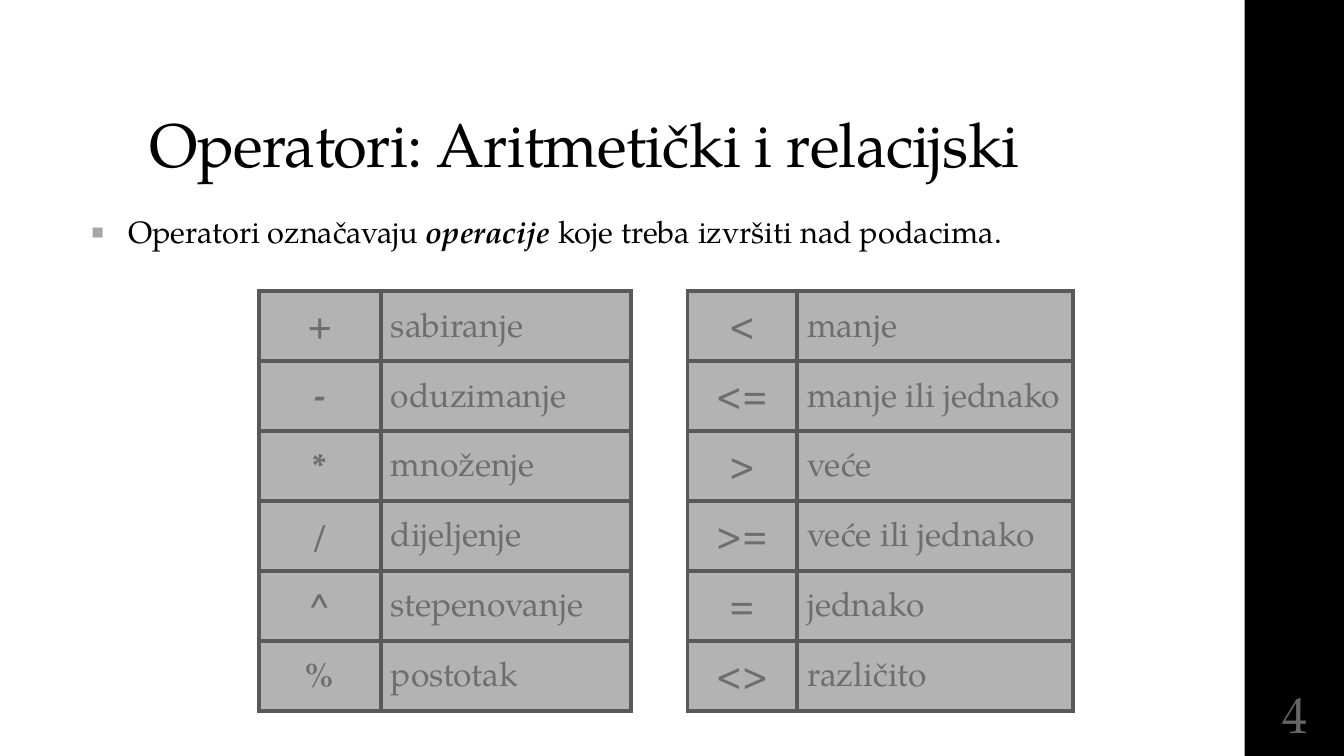
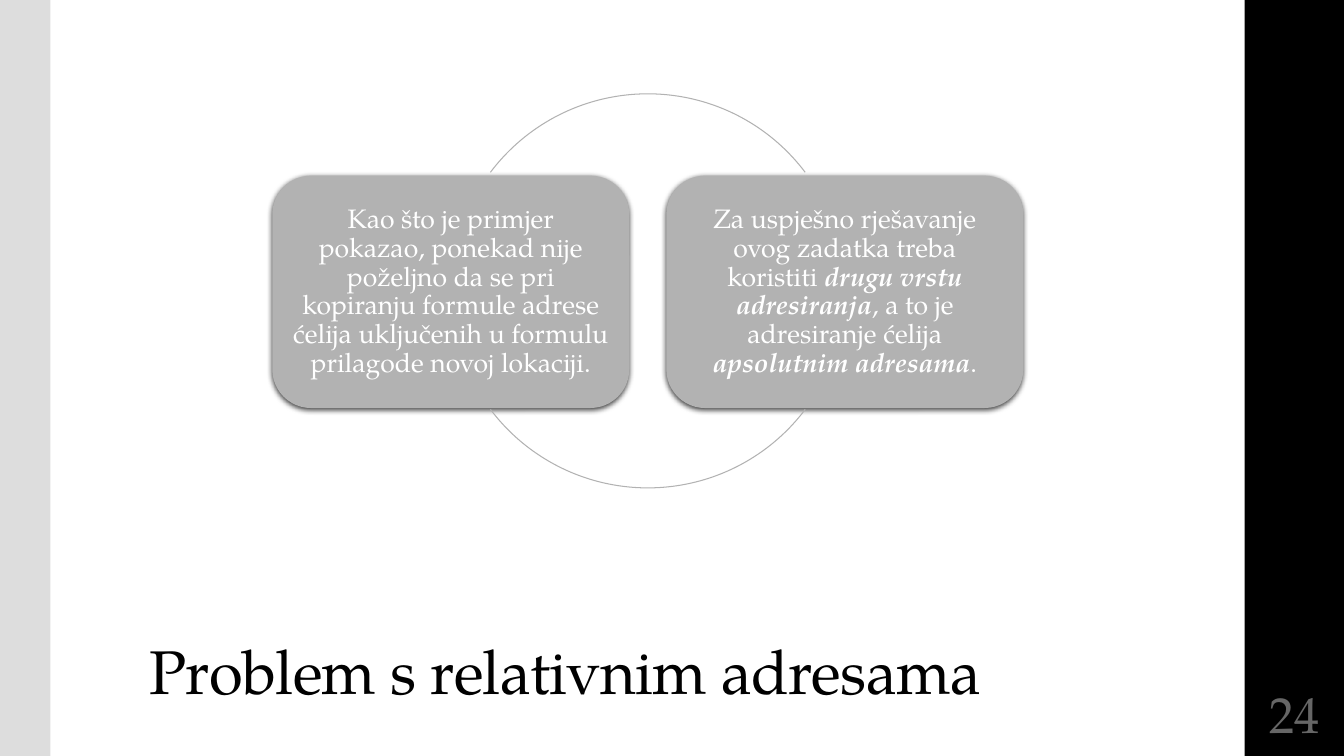
import dataclasses

import pptx
import pptx.dml.color
import pptx.enum.shapes
import pptx.enum.text
import pptx.oxml
import pptx.oxml.ns
import pptx.util

Pt = pptx.util.Pt
SHAPE = pptx.enum.shapes.MSO_SHAPE
ALIGN = pptx.enum.text.PP_ALIGN
ANCHOR = pptx.enum.text.MSO_ANCHOR
NS = pptx.oxml.ns.nsdecls("a")


@dataclasses.dataclass(frozen=True)
class Theme:
    font: str = "TeX Gyre Pagella"
    band: str = "000000"
    strip: str = "DDDDDD"
    ink: str = "000000"
    number: str = "666666"
    bullet: str = "A6A6A6"
    cell: str = "B3B3B3"
    cell_text: str = "6E6E6E"
    border: str = "595959"
    card: str = "B2B2B2"
    card_text: str = "FFFFFF"
    title_size: float = 44
    number_size: float = 36
    table_size: float = 24
    body_size: float = 22
    card_size: float = 19


THEME = Theme()
WIDTH, HEIGHT = 960, 540
BAND_LEFT = 889
ROW_HEIGHT = 50

ARITHMETIC = [("+", "sabiranje"), ("-", "oduzimanje"), ("*", "množenje"),
              ("/", "dijeljenje"), ("^", "stepenovanje"), ("%", "postotak")]
RELATIONAL = [("<", "manje"), ("<=", "manje ili jednako"), (">", "veće"),
              (">=", "veće ili jednako"), ("=", "jednako"), ("<>", "različito")]

# Each part is (text, emphasised)
DEFINITION = [("Operatori označavaju ", False), ("operacije", True),
              (" koje treba izvršiti nad podacima.", False)]
PROBLEM = [("Kao što je primjer pokazao, ponekad nije poželjno da se pri "
            "kopiranju formule adrese ćelija uključenih u formulu "
            "prilagode novoj lokaciji.", False)]
SOLUTION = [("Za uspješno rješavanje ovog zadatka treba koristiti ", False),
            ("drugu vrstu adresiranja", True),
            (", a to je adresiranje ćelija ", False),
            ("apsolutnim adresama", True), (".", False)]


# Text helpers
def rgb(colour):
    return pptx.dml.color.RGBColor.from_string(colour)


def add_span(para, text, size, colour, bold=False, italic=False):
    span = para.add_run()
    span.text = text
    font = span.font
    font.name, font.size = THEME.font, Pt(size)
    font.bold, font.italic = bold, italic
    font.color.rgb = rgb(colour)
    return span


def add_parts(para, parts, size, colour):
    for text, emphasised in parts:
        add_span(para, text, size, colour, emphasised, emphasised)


def set_frame(frame, anchor, inset=None):
    frame.word_wrap = True
    frame.auto_size = pptx.enum.text.MSO_AUTO_SIZE.NONE
    frame.vertical_anchor = anchor
    if inset is not None:
        frame.margin_left = frame.margin_right = Pt(inset)
        frame.margin_top = frame.margin_bottom = Pt(inset)


def place(box, left, top, width, height):
    box.left, box.top = Pt(left), Pt(top)
    box.width, box.height = Pt(width), Pt(height)


# Page elements
def add_block(page, kind, left, top, width, height, fill):
    block = page.shapes.add_shape(kind, Pt(left), Pt(top), Pt(width), Pt(height))
    block.shadow.inherit = False
    block.fill.solid()
    block.fill.fore_color.rgb = rgb(fill)
    block.line.fill.background()
    return block


def add_page(deck, layout, title, title_top, number):
    page = deck.slides.add_slide(deck.slide_layouts[layout])
    add_block(page, SHAPE.RECTANGLE, BAND_LEFT, 0, WIDTH - BAND_LEFT, HEIGHT, THEME.band)

    heading = page.shapes.title
    place(heading, 99.5, title_top, 763, 104)
    set_frame(heading.text_frame, ANCHOR.MIDDLE)
    heading.text_frame.vertical_anchor = ANCHOR.BOTTOM
    para = heading.text_frame.paragraphs[0]
    para.alignment, para.line_spacing = ALIGN.LEFT, 0.9
    span = add_span(para, title, THEME.title_size, THEME.ink)
    span.font._element.set("spc", "-50")

    box = page.shapes.add_textbox(Pt(BAND_LEFT), Pt(486), Pt(72), Pt(47))
    set_frame(box.text_frame, ANCHOR.MIDDLE, 3.6)
    para = box.text_frame.paragraphs[0]
    para.alignment = ALIGN.CENTER
    add_span(para, number, THEME.number_size, THEME.number)
    return page


def fill_bullet(body, parts):
    place(body, 57.5, 140.5, 763, 108)
    set_frame(body.text_frame, ANCHOR.TOP)
    para = body.text_frame.paragraphs[0]
    props = para._p.get_or_add_pPr()
    props.set("marL", str(Pt(27)))
    props.set("indent", str(Pt(-27)))
    for xml in (f'<a:buClr {NS}><a:srgbClr val="{THEME.bullet}"/></a:buClr>',
                f'<a:buSzPct {NS} val="130000"/>',
                f'<a:buChar {NS} char="▪"/>'):
        props.append(pptx.oxml.parse_xml(xml))
    para.line_spacing, para.space_before = 1.3, Pt(0)
    add_parts(para, parts, THEME.body_size, THEME.ink)


def style_cell(cell):
    cell.fill.solid()
    cell.fill.fore_color.rgb = rgb(THEME.cell)
    cell.vertical_anchor = ANCHOR.MIDDLE
    props = cell._tc.get_or_add_tcPr()
    for index, side in enumerate("LRTB"):
        props.insert(index, pptx.oxml.parse_xml(
            f'<a:ln{side} {NS} w="{Pt(3)}"><a:solidFill>'
            f'<a:srgbClr val="{THEME.border}"/></a:solidFill></a:ln{side}>'))


def add_operator_table(page, left, widths, rows):
    table = page.shapes.add_table(
        len(rows), len(widths), Pt(left), Pt(208),
        Pt(sum(widths)), Pt(ROW_HEIGHT * len(rows))).table
    table.first_row = table.horz_banding = False
    for column, width in zip(table.columns, widths):
        column.width = Pt(width)
    for row, texts in zip(table.rows, rows):
        row.height = Pt(ROW_HEIGHT)
        for index, (cell, text) in enumerate(zip(row.cells, texts)):
            style_cell(cell)
            para = cell.text_frame.paragraphs[0]
            para.alignment = ALIGN.LEFT if index else ALIGN.CENTER
            para.line_spacing = 1.2
            add_span(para, text, THEME.table_size, THEME.cell_text, bold=index == 0)


def add_card(page, left, parts):
    card = add_block(page, SHAPE.ROUNDED_RECTANGLE, left, 125.5, 255, 166, THEME.card)
    effects = card._element.spPr.find(pptx.oxml.ns.qn("a:effectLst"))
    effects.append(pptx.oxml.parse_xml(
        f'<a:outerShdw {NS} blurRad="{Pt(4)}" dist="{Pt(1.2)}" dir="5400000" '
        'rotWithShape="0"><a:srgbClr val="000000"><a:alpha val="75000"/>'
        '</a:srgbClr></a:outerShdw>'))
    set_frame(card.text_frame, ANCHOR.MIDDLE, 5.8)
    para = card.text_frame.paragraphs[0]
    para.alignment, para.line_spacing = ALIGN.CENTER, 0.9
    add_parts(para, parts, THEME.card_size, THEME.card_text)


def add_arc(page, start, end):
    arc = page.shapes.add_shape(SHAPE.ARC, Pt(322), Pt(67), Pt(281.5), Pt(281.5))
    arc.shadow.inherit = False
    arc.fill.background()
    arc.line.color.rgb = rgb(THEME.card)
    arc.line.width = Pt(0.75)
    # One degree is 60000 units, and adjustments count in 100000
    for index, degrees in enumerate((start, end)):
        arc.adjustments[index] = degrees * 0.6


# Slides
def build_operators(deck):
    page = add_page(deck, 1, "Operatori: Aritmetički i relacijski", 29, "4")
    fill_bullet(page.placeholders[1], DEFINITION)
    add_operator_table(page, 185, (87, 178.5), ARITHMETIC)
    add_operator_table(page, 491, (78.5, 197), RELATIONAL)


def build_addressing(deck):
    page = add_page(deck, 5, "Problem s relativnim adresama", 405, "24")
    add_block(page, SHAPE.RECTANGLE, 0, 0, 36, HEIGHT, THEME.strip)
    add_card(page, 194.5, PROBLEM)
    add_card(page, 476, SOLUTION)
    gap = 37
    add_arc(page, 180 + gap, 360 - gap)
    add_arc(page, gap, 180 - gap)


def main():
    deck = pptx.Presentation()
    deck.slide_width, deck.slide_height = Pt(WIDTH), Pt(HEIGHT)
    build_operators(deck)
    build_addressing(deck)
    deck.save("out.pptx")


if __name__ == "__main__":
    main()
